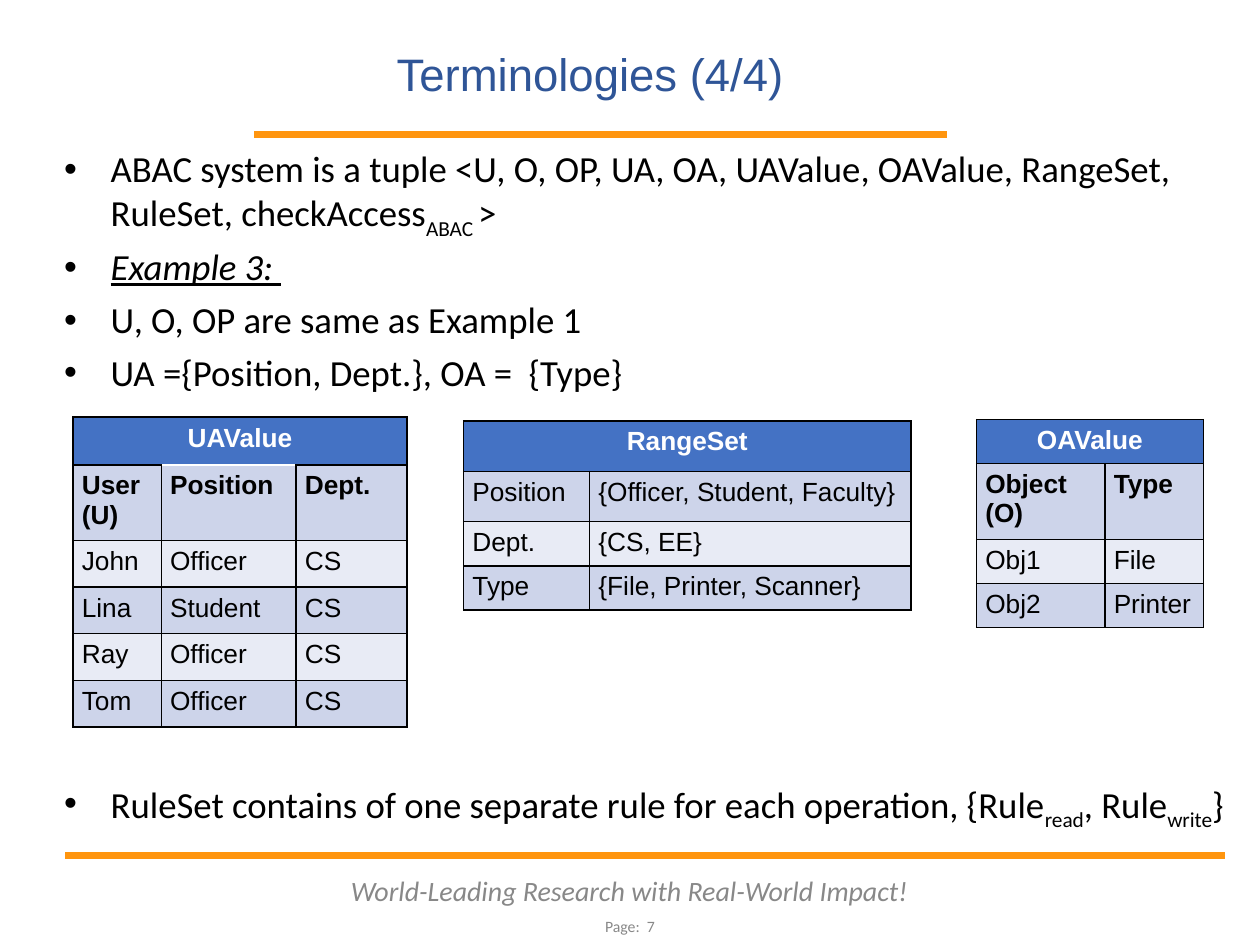
from dataclasses import dataclass

from lxml import etree
from pptx import Presentation
from pptx.dml.color import RGBColor as RGB
from pptx.enum.shapes import MSO_CONNECTOR as Connector
from pptx.enum.text import MSO_ANCHOR as Anchor, PP_ALIGN as Align
from pptx.oxml.ns import qn
from pptx.util import Inches, Pt


@dataclass(frozen=True)
class Theme:
    rule: str = "FF950E"
    title: str = "2F5597"
    muted: str = "888888"
    ink: str = "000000"
    white: str = "FFFFFF"
    header: str = "4472C4"
    bands: tuple = ("E8EBF5", "CDD4EA")
    heading_font: str = "Arial"
    body_font: str = "Calibri"
    title_size: float = 26
    body_size: float = 21
    motto_size: float = 16
    cell_size: float = 15
    page_size: float = 9
    rule_width: float = 4
    border_width: float = 0.96


THEME = Theme()
BODY = dict(name=THEME.body_font, size=THEME.body_size, color=THEME.ink)
CELL = dict(name=THEME.heading_font, size=THEME.cell_size, color=THEME.ink, bold=False)
EXAMPLE = dict(italic=True, underline=True)

STATEMENTS = [
    [("ABAC system is a tuple <U, O, OP, UA, OA, UAValue, OAValue, RangeSet, "
      "RuleSet, checkAccess", {}), ("ABAC ", {"sub": True}), (">", {})],
    [("Example 3: ", EXAMPLE)],
    [("U, O, OP are same as Example 1", {})],
    [("UA ={Position, Dept.}, OA =  {Type}", {})],
]
RULE_SET = [
    [("RuleSet contains of one separate rule for each operation, {Rule", {}),
     ("read", {"sub": True}), (", Rule", {}), ("write", {"sub": True}), ("}", {})],
]

RANGE_SET = [
    ["Position", "{Officer, Student, Faculty}"],
    ["Dept.", "{CS, EE}"],
    ["Type", "{File, Printer, Scanner}"],
]
USER_VALUES = [
    ["User\n(U)", "Position", "Dept."],
    ["John", "Officer", "CS"],
    ["Lina", "Student", "CS"],
    ["Ray", "Officer", "CS"],
    ["Tom", "Officer", "CS"],
]
OBJECT_VALUES = [
    ["Object\n(O)", "Type"],
    ["Obj1", "File"],
    ["Obj2", "Printer"],
]


def add_run(paragraph, text, look):
    """Add a run; look holds font attributes plus size, color and sub."""
    run = paragraph.add_run()
    run.text = text
    for key, value in look.items():
        if key == "color":
            run.font.color.rgb = RGB.from_string(value)
        elif key == "size":
            run.font.size = Pt(value)
        elif key == "sub":
            run.font._element.set("baseline", "-25000")
        else:
            setattr(run.font, key, value)


def add_frame(slide, box, anchor=Anchor.TOP):
    frame = slide.shapes.add_textbox(*map(Inches, box)).text_frame
    frame.word_wrap = True
    frame.vertical_anchor = anchor
    return frame


def add_line_of_text(slide, box, text, look, anchor=Anchor.MIDDLE, spacing=1.0):
    paragraph = add_frame(slide, box, anchor).paragraphs[0]
    paragraph.alignment = Align.CENTER
    paragraph.line_spacing = spacing
    add_run(paragraph, text, look)


def add_rule(slide, left, top, width):
    rule = slide.shapes.add_connector(
        Connector.STRAIGHT, *map(Inches, (left, top, left + width, top)))
    rule.line.color.rgb = RGB.from_string(THEME.rule)
    rule.line.width = Pt(THEME.rule_width)
    etree.SubElement(rule._element.spPr, qn("a:effectLst"))


def add_bullet(paragraph):
    properties = paragraph._p.get_or_add_pPr()
    properties.set("marL", str(Inches(0.5)))
    properties.set("indent", str(Inches(-0.37)))
    color = etree.SubElement(properties, qn("a:buClr"))
    etree.SubElement(color, qn("a:srgbClr"), val=THEME.ink)
    etree.SubElement(properties, qn("a:buFont"), typeface="Arial")
    etree.SubElement(properties, qn("a:buChar"), char="•")


def add_bullets(slide, box, items):
    frame = add_frame(slide, box)
    for index, runs in enumerate(items):
        paragraph = frame.add_paragraph() if index else frame.paragraphs[0]
        add_bullet(paragraph)
        paragraph.line_spacing = 0.9
        paragraph.space_before = Pt(7.5 if index else 0)
        for text, look in runs:
            add_run(paragraph, text, BODY | look)


def set_borders(cell, **colors):
    """Draw all four borders in ink, save the sides given another colour."""
    properties = cell._tc.get_or_add_tcPr()
    for side in "LRTB":
        line = etree.SubElement(properties, qn(f"a:ln{side}"),
                                w=str(Pt(THEME.border_width)))
        fill = etree.SubElement(line, qn("a:solidFill"))
        etree.SubElement(fill, qn("a:srgbClr"), val=colors.get(side, THEME.ink))


def fill_cell(cell, text, fill, look, align, borders):
    set_borders(cell, **borders)
    cell.fill.solid()
    cell.fill.fore_color.rgb = RGB.from_string(fill)
    cell.margin_left = cell.margin_right = Inches(0.07)
    cell.margin_top = cell.margin_bottom = Inches(0.05)
    for index, line in enumerate(text.split("\n")):
        frame = cell.text_frame
        paragraph = frame.add_paragraph() if index else frame.paragraphs[0]
        paragraph.alignment = align
        add_run(paragraph, line, CELL | look)


def add_value_table(slide, left, top, widths, heights, title, rows,
                    labelled=True, white_edge=None):
    """Place a titled table; white_edge is the column with a white line under the title."""
    table = slide.shapes.add_table(
        len(heights), len(widths),
        *map(Inches, (left, top, sum(widths), sum(heights)))).table
    for column, width in zip(table.columns, widths):
        column.width = Inches(width)
    for row, height in zip(table.rows, heights):
        row.height = Inches(height)

    title_look = dict(color=THEME.white, bold=True)
    for column in range(len(widths)):
        edge = {"B": THEME.white} if column == white_edge else {}
        fill_cell(table.cell(0, column), "" if column else title,
                  THEME.header, title_look, Align.CENTER, edge)
    table.cell(0, 0).merge(table.cell(0, len(widths) - 1))

    for number, values in enumerate(rows, 1):
        is_label = labelled and number == 1
        for column, text in enumerate(values):
            edge = {"T": THEME.white} if number == 1 and column == white_edge else {}
            fill_cell(table.cell(number, column), text, THEME.bands[number % 2],
                      {"bold": is_label}, Align.LEFT, edge)


def add_header(slide):
    add_line_of_text(slide, (1.99, 0.34, 5.39, 0.51), "Terminologies (4/4)",
                     dict(name=THEME.heading_font, size=THEME.title_size,
                          color=THEME.title), Anchor.BOTTOM, 0.9)
    add_rule(slide, 2.02, 1.07, 5.5)


def add_footer(slide):
    add_rule(slide, 0.52, 6.79, 9.2)
    muted = dict(name=THEME.body_font, color=THEME.muted)
    add_line_of_text(slide, (2.58, 6.89, 4.83, 0.36),
                     "World-Leading Research with Real-World Impact!",
                     muted | dict(size=THEME.motto_size, italic=True))
    add_line_of_text(slide, (4.06, 7.17, 1.88, 0.36), "Page:  7",
                     muted | dict(size=THEME.page_size))


def main():
    deck = Presentation()
    deck.slide_width, deck.slide_height = Inches(10), Inches(7.5)
    slide = deck.slides.add_slide(deck.slide_layouts[6])
    add_header(slide)
    add_footer(slide)
    add_bullets(slide, (0.28, 1.15, 9.72, 2.1), STATEMENTS)
    add_bullets(slide, (0.28, 6.16, 9.72, 0.55), RULE_SET)
    add_value_table(slide, 3.68, 3.34, [1, 2.55], [0.4, 0.4, 0.35, 0.35],
                    "RangeSet", RANGE_SET, labelled=False)
    add_value_table(slide, 0.58, 3.31, [0.7, 1.07, 0.88], [0.38, 0.54] + [0.37] * 4,
                    "UAValue", USER_VALUES, white_edge=1)
    add_value_table(slide, 7.75, 3.33, [1.02, 0.78], [0.34, 0.54, 0.34, 0.34],
                    "OAValue", OBJECT_VALUES)
    deck.save("out.pptx")


if __name__ == "__main__":
    main()
